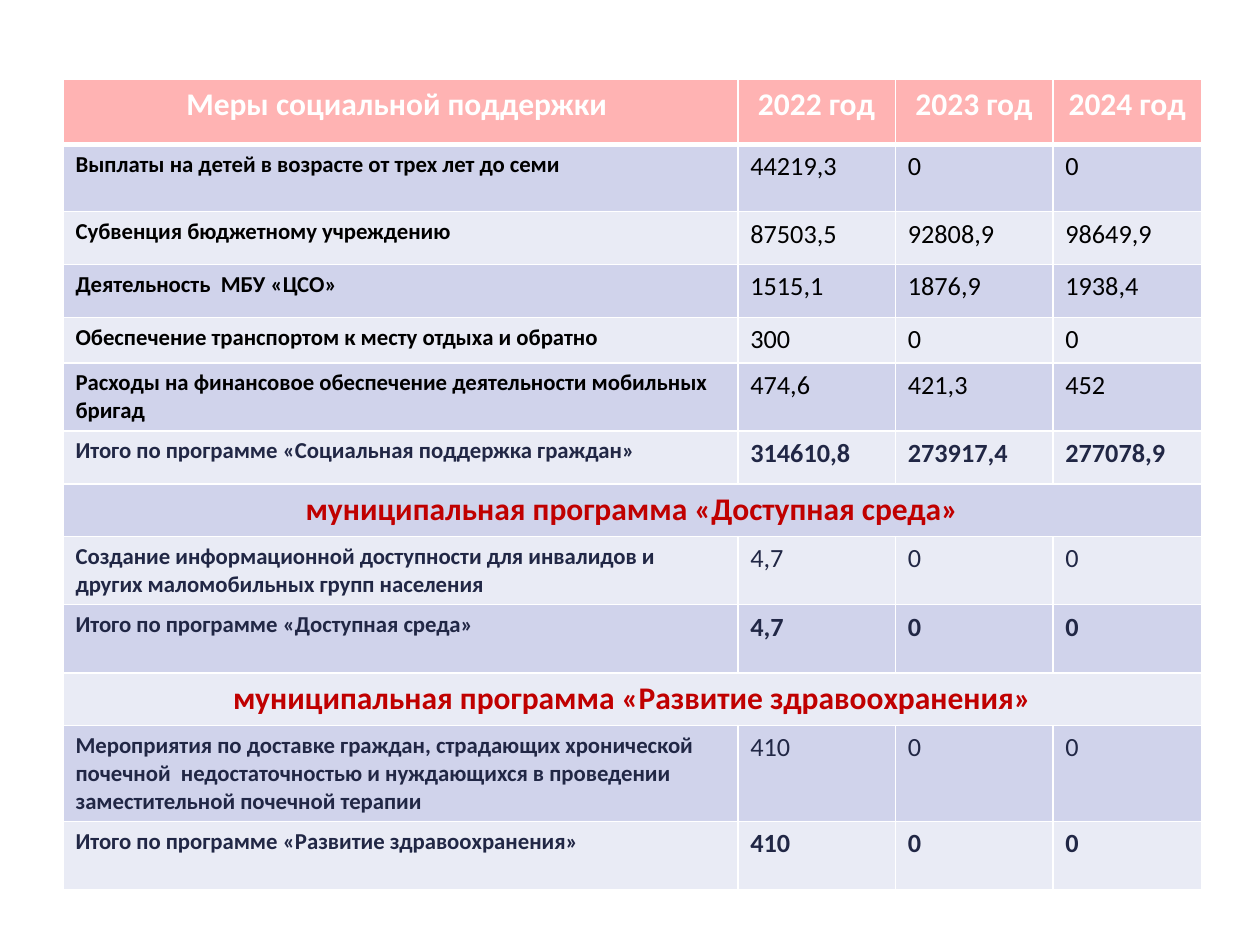
from dataclasses import dataclass

from lxml.etree import SubElement
from pptx import Presentation
from pptx.dml.color import RGBColor as Color
from pptx.enum.text import PP_ALIGN as Align
from pptx.oxml.ns import qn
from pptx.util import Pt


@dataclass(frozen=True)
class Theme:
    font: str = "Calibri"
    heading_size: float = 18
    label_size: float = 13
    value_size: float = 15
    white: str = "FFFFFF"
    black: str = "000000"
    navy: str = "212745"
    red: str = "C00000"
    header_fill: str = "FFB3B3"
    dark_band: str = "D0D3EB"
    light_band: str = "E9EBF5"
    border: float = 1
    header_border: float = 3


# Each row: kind, height in points, cell texts
ROWS = [
    ("header", 37.5, ["Меры социальной поддержки ", "2022 год", "2023 год", "2024 год"]),
    ("item", 38.5, ["Выплаты на детей в возрасте от трех лет до семи", "44219,3", "0", "0"]),
    ("item", 30.2, ["Субвенция бюджетному учреждению", "87503,5", "92808,9", "98649,9"]),
    ("item", 30.2, ["Деятельность  МБУ «ЦСО»", "1515,1", "1876,9", "1938,4"]),
    ("item", 26, ["Обеспечение транспортом к месту отдыха и обратно", "300", "0", "0"]),
    ("item", 38.9, ["Расходы на финансовое обеспечение деятельности мобильных бригад",
                    "474,6", "421,3", "452"]),
    ("total", 30.2, ["Итого по программе «Социальная поддержка граждан»",
                     "314610,8", "273917,4", "277078,9"]),
    ("program", 30.2, ["муниципальная программа «Доступная среда»"]),
    ("program item", 38.9, ["Создание информационной доступности для инвалидов и других "
                            "маломобильных групп населения", "4,7", "0", "0"]),
    ("total", 38.9, ["Итого по программе «Доступная среда»", "4,7", "0", "0"]),
    ("program", 30.2, ["муниципальная программа «Развитие здравоохранения»"]),
    ("program item", 54.8, ["Мероприятия по доставке граждан, страдающих хронической почечной  "
                            "недостаточностью и нуждающихся в проведении заместительной "
                            "почечной терапии", "410", "0", "0"]),
    ("total", 38.9, ["Итого по программе «Развитие здравоохранения»", "410", "0", "0"]),
]
COLUMN_WIDTHS = [385.6, 90, 90, 85]


class SlideBuilder:
    def __init__(self, slide, theme):
        self.slide = slide
        self.theme = theme

    def add_budget_table(self, left, top, column_widths, rows):
        heights = [height for _, height, _ in rows]
        frame = self.slide.shapes.add_table(
            len(rows), len(column_widths), Pt(left), Pt(top),
            Pt(sum(column_widths)), Pt(sum(heights)))
        table = frame.table
        for column, width in zip(table.columns, column_widths):
            column.width = Pt(width)
        for row_index, (kind, height, texts) in enumerate(rows):
            table.rows[row_index].height = Pt(height)
            for column_index in range(len(column_widths)):
                cell = table.cell(row_index, column_index)
                self.fill_cell(cell, kind, row_index)
                self.border_cell(cell, row_index)
                if column_index < len(texts):
                    self.write_cell(cell, texts[column_index], kind, column_index == 0)
            if kind == "program":
                table.cell(row_index, 0).merge(table.cell(row_index, len(column_widths) - 1))

    def fill_cell(self, cell, kind, row_index):
        theme = self.theme
        band = theme.dark_band if row_index % 2 else theme.light_band
        cell.fill.solid()
        cell.fill.fore_color.rgb = Color.from_string(
            theme.header_fill if kind == "header" else band)

    def border_cell(self, cell, row_index):
        """Draw all four borders, with the thick line under the header row."""
        theme = self.theme
        widths = dict.fromkeys(("lnL", "lnR", "lnT", "lnB"), theme.border)
        if row_index == 0:
            widths["lnB"] = theme.header_border
        elif row_index == 1:
            widths["lnT"] = theme.header_border
        properties = cell._tc.get_or_add_tcPr()
        for position, (side, width) in enumerate(widths.items()):
            line = SubElement(properties, qn(f"a:{side}"), w=str(Pt(width)))
            fill = SubElement(line, qn("a:solidFill"))
            SubElement(fill, qn("a:srgbClr"), val=theme.white)
            properties.insert(position, line)  # borders must precede the cell fill

    def write_cell(self, cell, text, kind, is_label):
        theme = self.theme
        heading = kind in ("header", "program")
        color = {"header": theme.white, "program": theme.red,
                 "item": theme.black}.get(kind, theme.navy)
        body_size = theme.label_size if is_label else theme.value_size
        cell.text_frame.text = text
        paragraph = cell.text_frame.paragraphs[0]
        paragraph.alignment = Align.CENTER if heading else Align.LEFT
        font = paragraph.runs[0].font
        font.name = theme.font
        font.size = Pt(theme.heading_size if heading else body_size)
        font.bold = heading or is_label or kind == "total"
        font.color.rgb = Color.from_string(color)


def main():
    presentation = Presentation()
    presentation.slide_width, presentation.slide_height = Pt(720), Pt(540)
    blank_layout = presentation.slide_layouts[6]
    builder = SlideBuilder(presentation.slides.add_slide(blank_layout), Theme())
    builder.add_budget_table(36, 45, COLUMN_WIDTHS, ROWS)
    presentation.save("out.pptx")


if __name__ == "__main__":
    main()
